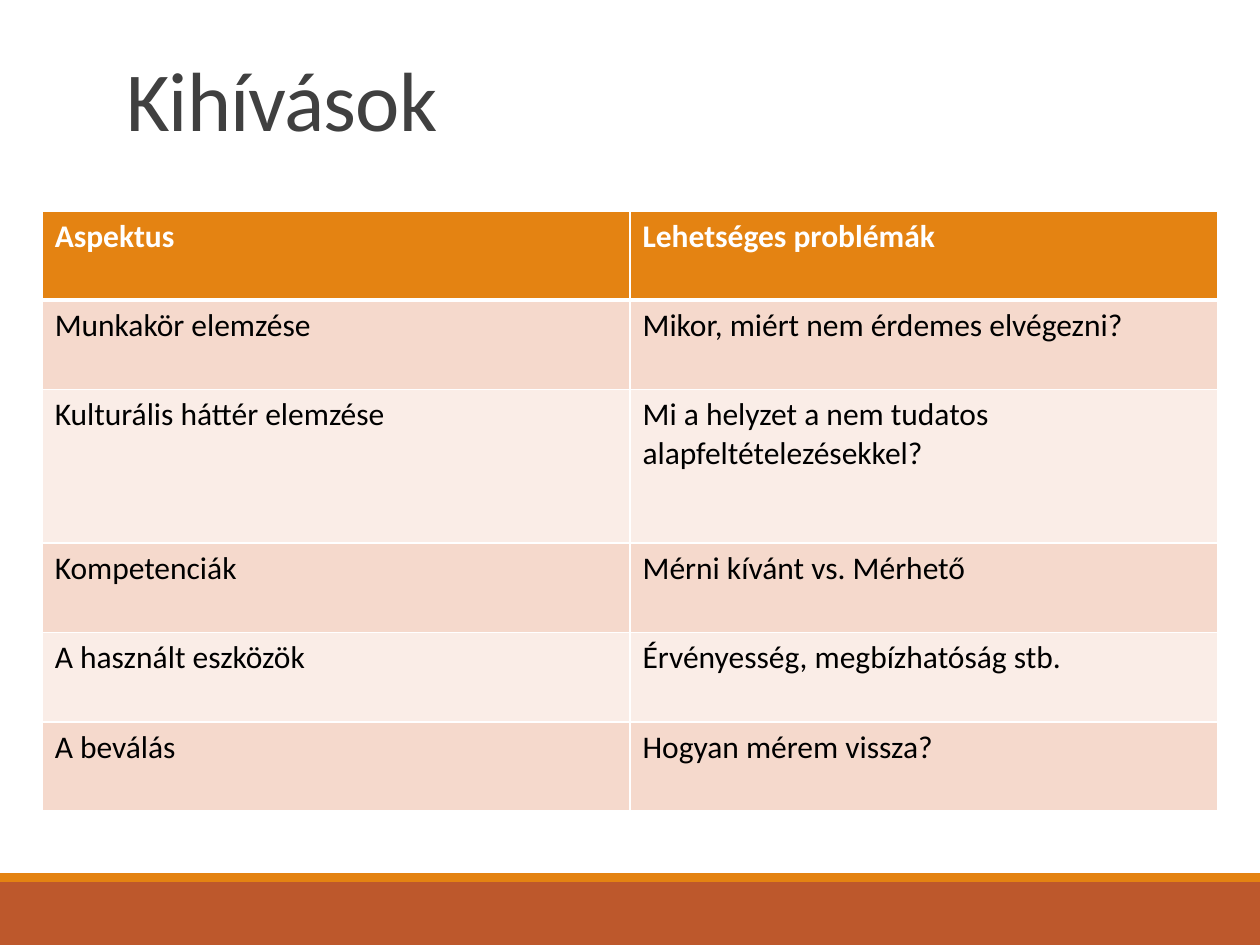
from lxml.etree import SubElement
from pptx import Presentation
from pptx.dml.color import RGBColor
from pptx.enum.shapes import MSO_SHAPE
from pptx.enum.text import MSO_ANCHOR, PP_ALIGN
from pptx.oxml.ns import qn
from pptx.util import Cm, Pt

COLORS = {
    "title": "404040", "orange": "E48312", "rust": "BD582C",
    "dark_band": "F5D9CC", "light_band": "FAEDE7",
    "white": "FFFFFF", "black": "000000",
}


def add_run(paragraph, text, size, color, bold=False):
    run = paragraph.add_run()
    run.text = text
    run.font.name = "Calibri"
    run.font.size = Pt(size)
    run.font.bold = bold
    run.font.color.rgb = RGBColor.from_string(COLORS[color])
    return run


def set_border(cell, side, points):
    line = SubElement(cell._tc.get_or_add_tcPr(), qn(f"a:ln{side}"), w=str(Pt(points)))
    fill = SubElement(line, qn("a:solidFill"))
    SubElement(fill, qn("a:srgbClr"), val=COLORS["white"])


presentation = Presentation()
presentation.slide_width = Cm(25.4)
presentation.slide_height = Cm(19.05)
slide = presentation.slides.add_slide(presentation.slide_layouts[5])

# Footer bands
for top, height, color in [(17.78, 1.27, "rust"), (17.6, 0.18, "orange")]:
    band = slide.shapes.add_shape(MSO_SHAPE.RECTANGLE, 0, Cm(top), Cm(25.4), Cm(height))
    band.shadow.inherit = False
    band.fill.solid()
    band.fill.fore_color.rgb = RGBColor.from_string(COLORS[color])
    band.line.fill.background()

# Title
title = slide.shapes.title
title.left, title.top, title.width, title.height = Cm(2.29), Cm(0.79), Cm(20.96), Cm(2.34)
title.text_frame.vertical_anchor = MSO_ANCHOR.BOTTOM
heading = title.text_frame.paragraphs[0]
heading.alignment = PP_ALIGN.LEFT
heading.line_spacing = 0.85
heading_run = add_run(heading, "Kihívások", 48, "title")
heading_run.font._element.set("spc", "-50")

# Challenges table
challenges = [
    ("Aspektus", "Lehetséges problémák"),
    ("Munkakör elemzése", "Mikor, miért nem érdemes elvégezni?"),
    ("Kulturális háttér elemzése", "Mi a helyzet a nem tudatos alapfeltételezésekkel?"),
    ("Kompetenciák", "Mérni kívánt vs. Mérhető"),
    ("A használt eszközök", "Érvényesség, megbízhatóság stb."),
    ("A beválás", "Hogyan mérem vissza?"),
]
row_heights = [1.8, 1.8, 3.1, 1.8, 1.8, 1.8]
table = slide.shapes.add_table(
    len(challenges), 2, Cm(0.85), Cm(4.25), Cm(23.7), Cm(sum(row_heights))
).table

for row, (texts, height) in enumerate(zip(challenges, row_heights)):
    table.rows[row].height = Cm(height)
    header = row == 0
    band_color = "orange" if header else "dark_band" if row % 2 else "light_band"
    for column, text in enumerate(texts):
        cell = table.cell(row, column)
        for side in "LRTB":
            thick = (side == "B" and header) or (side == "T" and row == 1)
            set_border(cell, side, 3 if thick else 1)
        cell.fill.solid()
        cell.fill.fore_color.rgb = RGBColor.from_string(COLORS[band_color])
        add_run(cell.text_frame.paragraphs[0], text, 18,
                "white" if header else "black", bold=header)

presentation.save("out.pptx")
